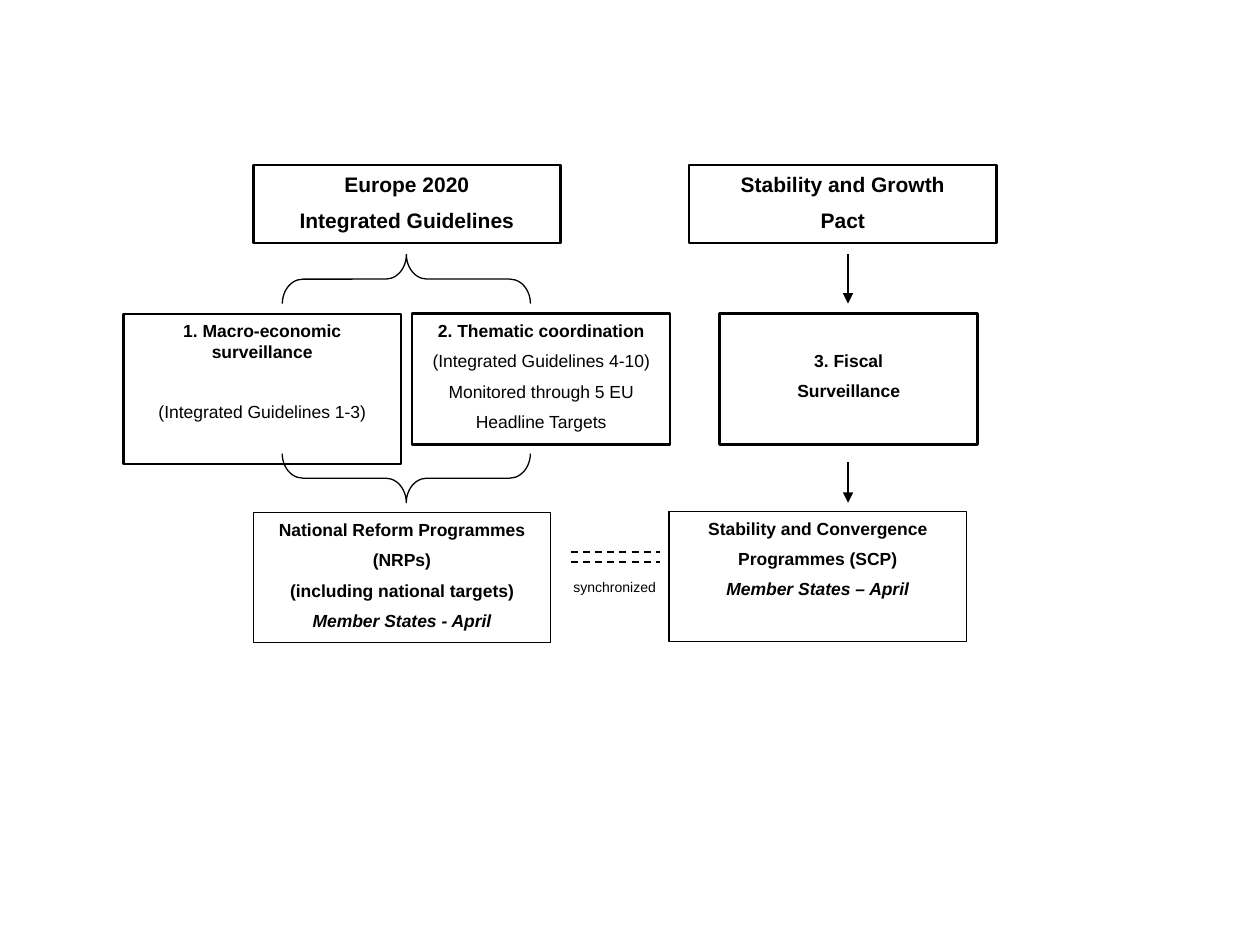
from pptx import Presentation
from pptx.dml.color import RGBColor
from pptx.enum import dml, shapes, text
from pptx.oxml import ns, xmlchemy as xc
from pptx.util import Pt

HUES = {"ink": "000000"}
INK = RGBColor.from_string(HUES["ink"])
HEAD = (175.7, 44.6)
CARD = (147.6, 74.9)
PLAN = (169.9, 74.2)


def write(frame, rows, size, pad=3.6, gap=None):
    frame.word_wrap = True
    frame.vertical_anchor = text.MSO_ANCHOR.TOP
    frame.margin_top = Pt(pad)
    for i, (words, style) in enumerate(rows):
        para = frame.add_paragraph() if i else frame.paragraphs[0]
        para.text = words
        para.alignment = text.PP_ALIGN.CENTER
        if i:
            para.space_before = Pt(gap or round(size * 0.53, 1))
        font = para.font
        font.name = "Arial"
        font.size = Pt(size)
        font.bold = "b" in style
        font.italic = "i" in style
        font.color.rgb = INK


def shape(slide, kind, x, y, w, h, line):
    item = slide.shapes.add_shape(kind, Pt(x), Pt(y), Pt(w), Pt(h))
    item.shadow.inherit = False
    item.fill.background()
    item.line.color.rgb = INK
    item.line.width = Pt(line)
    return item


def panel(slide, x, y, dims, line, rows, size=10, **opts):
    item = shape(slide, shapes.MSO_SHAPE.RECTANGLE, x, y, *dims, line)
    write(item.text_frame, rows, size, **opts)


def brace(slide, mid, y, turn):
    w, h = 28.1, 141.8
    item = shape(slide, shapes.MSO_SHAPE.LEFT_BRACE, mid - w / 2, y - h / 2, w, h, 0.75)
    item.rotation = turn
    item.adjustments[0] = 0.42
    item.adjustments[1] = 0.5


def link(slide, x, y, dx, dy, line):
    item = slide.shapes.add_connector(
        shapes.MSO_CONNECTOR.STRAIGHT, Pt(x), Pt(y), Pt(x + dx), Pt(y + dy))
    item.line.color.rgb = INK
    item.line.width = Pt(line)
    item._element.spPr.append(xc.OxmlElement("a:effectLst"))
    return item


def arrow(slide, x, y, drop):
    item = link(slide, x, y, 0, drop, 0.75)
    tip = xc.OxmlElement("a:tailEnd")
    tip.set("type", "triangle")
    item._element.spPr.find(ns.qn("a:ln")).append(tip)


def reform(slide, x, y):
    stem = x + 74.1
    panel(slide, stem, y, HEAD, 1.5,
          [("Europe 2020", "b"), ("Integrated Guidelines", "b")], 12)
    panel(slide, x, y + 85, (158.4, 85.7), 1.25,
          [("1. Macro-economic surveillance", "b"),
           ("(Integrated Guidelines 1-3)", "")], gap=22.2)
    panel(slide, x + 164.8, y + 85, CARD, 1.5,
          [("2. Thematic coordination", "b"), ("(Integrated Guidelines 4-10)", ""),
           ("Monitored through 5 EU", ""), ("Headline Targets", "")])
    panel(slide, stem, y + 198.7, PLAN, 0.75,
          [("National Reform Programmes", "b"), ("(NRPs)", "b"),
           ("(including national targets)", "b"), ("Member States - April", "bi")])
    for dy, turn in ((65.2, 90), (178.9, 270)):
        brace(slide, x + 161.6, y + dy, turn)


def fiscal(slide, x, y):
    panel(slide, x + 11.5, y, HEAD, 1.5,
          [("Stability and Growth", "b"), ("Pact", "b")], 12)
    panel(slide, x + 28.8, y + 85, CARD, 1.5,
          [("3. Fiscal", "b"), ("Surveillance", "b")], pad=20.5)
    panel(slide, x, y + 198, PLAN, 0.75,
          [("Stability and Convergence", "b"), ("Programmes (SCP)", "b"),
           ("Member States – April", "bi")])
    for dy, drop in ((51.1, 28.1), (169.9, 23.1)):
        arrow(slide, x + 102.3, y + dy, drop)


def sync(slide, x, y, w):
    for dy in (0, 5.7):
        link(slide, x, y + dy, w, 0, 1).line.dash_style = dml.MSO_LINE.DASH
    label = slide.shapes.add_textbox(Pt(x - 11.6), Pt(y + 11.5), Pt(73.4), Pt(16.6))
    write(label.text_frame, [("synchronized", "")], 8)


def main():
    deck = Presentation()
    deck.slide_width, deck.slide_height = Pt(720), Pt(540)
    slide = deck.slides.add_slide(deck.slide_layouts[6])
    reform(slide, 70.6, 94.3)
    fiscal(slide, 382.3, 94.3)
    sync(slide, 326.2, 315.4, 51.1)
    deck.save("out.pptx")


if __name__ == "__main__":
    main()
